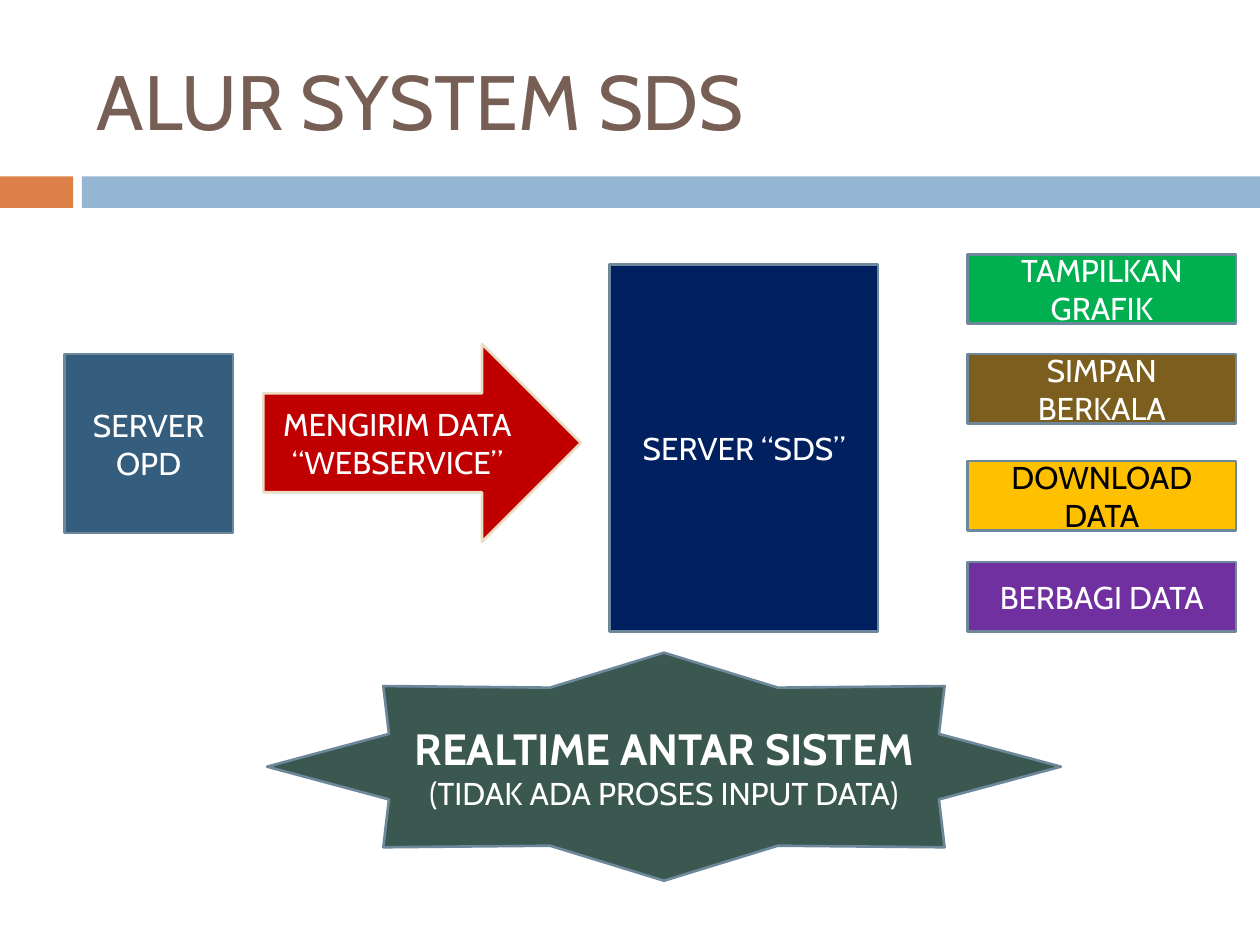
from dataclasses import dataclass

from pptx import Presentation
from pptx.dml.color import RGBColor
from pptx.enum.shapes import MSO_SHAPE
from pptx.enum.text import MSO_ANCHOR, PP_ALIGN
from pptx.util import Inches, Pt

COLUMNS, ROWS = 1000, 750
FONT = "Cabin"
COLORS = {
    "orange": "DD8047", "sky": "94B6D2", "brown": "775F55",
    "steel": "355D7E", "outline": "6D879B", "red": "C00000",
    "cream": "EBDDC3", "navy": "002060", "green": "00B050",
    "olive": "7C5F1E", "amber": "FFC000", "purple": "7030A0",
    "pine": "3A5750", "white": "FFFFFF", "black": "000000",
}


@dataclass(frozen=True)
class Box:
    column: int
    row: int
    columns: int
    rows: int


@dataclass(frozen=True)
class Line:
    text: str
    size: int = 18
    bold: bool = False


@dataclass(frozen=True)
class Block:
    box: Box
    fill: str
    lines: tuple[Line, ...] = ()
    outline: str | None = "outline"
    text_color: str = "white"
    preset: MSO_SHAPE = MSO_SHAPE.RECTANGLE


@dataclass(frozen=True)
class Output:
    row: int
    text: str
    fill: str
    text_color: str = "white"


BANDS = (
    Block(Box(0, 140, 58, 25), "orange", outline=None),
    Block(Box(65, 140, 935, 25), "sky", outline=None),
)
FLOW = (
    Block(Box(51, 281, 134, 142), "steel", (Line("SERVER OPD"),)),
    Block(Box(209, 273, 252, 157), "red",
          (Line("MENGIRIM DATA"), Line("“WEBSERVICE”")),
          outline="cream", preset=MSO_SHAPE.RIGHT_ARROW),
    Block(Box(484, 210, 213, 291), "navy", (Line("SERVER “SDS”"),)),
)
OUTPUTS = (
    Output(202, "TAMPILKAN GRAFIK", "green"),
    Output(281, "SIMPAN BERKALA", "olive"),
    Output(366, "DOWNLOAD DATA", "amber", "black"),
    Output(446, "BERBAGI DATA", "purple"),
)
SUMMARY = Block(
    Box(212, 518, 630, 181), "pine",
    (Line("REALTIME ANTAR SISTEM", 25, True),
     Line("(TIDAK ADA PROSES INPUT DATA)")),
    preset=MSO_SHAPE.STAR_8_POINT,
)


def color(name: str) -> RGBColor:
    return RGBColor.from_string(COLORS[name])


def place(presentation, box: Box) -> tuple[int, int, int, int]:
    column = presentation.slide_width / COLUMNS
    row = presentation.slide_height / ROWS
    return (round(box.column * column), round(box.row * row),
            round(box.columns * column), round(box.rows * row))


def write(shape, lines: tuple[Line, ...], text_color: str, alignment: PP_ALIGN) -> None:
    frame = shape.text_frame
    frame.word_wrap = True
    frame.vertical_anchor = MSO_ANCHOR.MIDDLE
    for index, line in enumerate(lines):
        paragraph = frame.add_paragraph() if index else frame.paragraphs[0]
        paragraph.text = line.text
        paragraph.alignment = alignment
        paragraph.font.name = FONT
        paragraph.font.size = Pt(line.size)
        paragraph.font.bold = line.bold
        paragraph.font.color.rgb = color(text_color)


def draw_block(presentation, slide, block: Block) -> None:
    shape = slide.shapes.add_shape(block.preset, *place(presentation, block.box))
    shape.shadow.inherit = False
    shape.fill.solid()
    shape.fill.fore_color.rgb = color(block.fill)
    if block.outline:
        shape.line.color.rgb = color(block.outline)
        shape.line.width = Pt(1.5)
    else:
        shape.line.fill.background()
    if block.lines:
        write(shape, block.lines, block.text_color, PP_ALIGN.CENTER)


def draw_title(presentation, slide, text: str) -> None:
    title = slide.shapes.add_textbox(*place(presentation, Box(67, 25, 892, 108)))
    write(title, (Line(text, 44),), "brown", PP_ALIGN.LEFT)


def main() -> None:
    presentation = Presentation()
    presentation.slide_width = Inches(10)
    presentation.slide_height = Inches(7.5)
    slide = presentation.slides.add_slide(presentation.slide_layouts[6])

    outputs = tuple(
        Block(Box(768, output.row, 213, 55), output.fill,
              (Line(output.text),), text_color=output.text_color)
        for output in OUTPUTS
    )
    for band in BANDS:
        draw_block(presentation, slide, band)
    draw_title(presentation, slide, "ALUR SYSTEM SDS")
    for block in (*FLOW, *outputs, SUMMARY):
        draw_block(presentation, slide, block)

    presentation.save("out.pptx")


if __name__ == "__main__":
    main()
